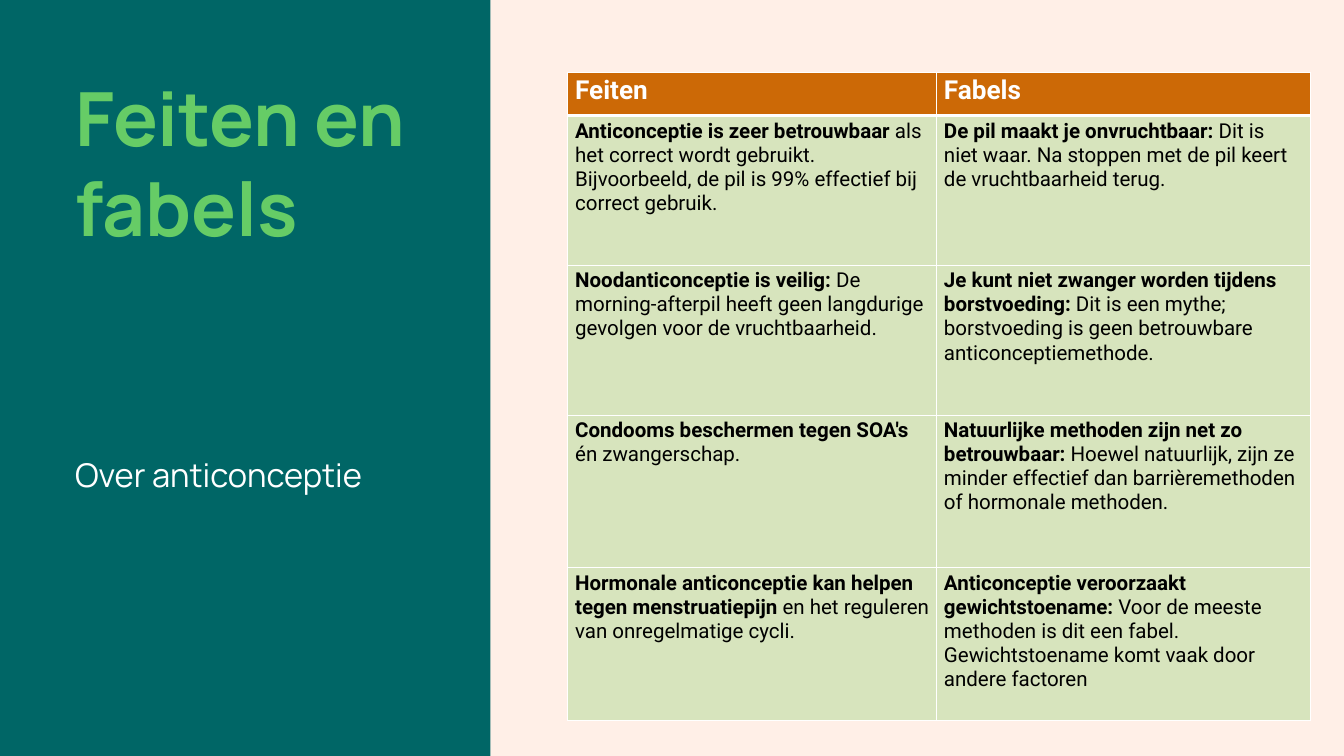
from typing import Any, NamedTuple

from lxml.etree import SubElement
from pptx import Presentation
from pptx.dml.color import RGBColor
from pptx.enum.shapes import MSO_SHAPE
from pptx.oxml.ns import qn
from pptx.util import Cm, Pt

COLORS = {
    "page": "FFEFE7",
    "panel": "006666",
    "title": "66CC66",
    "white": "FFFFFF",
    "black": "000000",
    "head": "CC6906",
    "body": "D7E4BD",
}


class Label(NamedTuple):
    text: str
    top: float
    height: float
    size: int
    color: str
    bold: bool
    lead: int


class Entry(NamedTuple):
    claim: str
    rest: str = ""


LABELS = [
    Label("Feiten en fabels", 2.72, 10.26, 80, "title", True, 96),
    Label("Over anticonceptie", 17.2, 1.5, 35, "white", False, 42),
]
WIDTHS = [13.94, 14.12]
HEIGHTS = [1.65, 5.66, 5.66, 5.77, 5.77]
MARGINS = {
    "margin_left": Cm(0.28),
    "margin_right": Cm(0.28),
    "margin_top": Cm(0.13),
    "margin_bottom": Cm(0.13),
}
FLUSH = dict.fromkeys(MARGINS, Cm(0))
ROWS = [
    (Entry("Feiten"), Entry("Fabels")),
    (
        Entry("Anticonceptie is zeer betrouwbaar",
              " als het correct wordt gebruikt. Bijvoorbeeld, de pil is 99% effectief bij correct gebruik."),
        Entry("De pil maakt je onvruchtbaar:",
              " Dit is niet waar. Na stoppen met de pil keert de vruchtbaarheid terug."),
    ),
    (
        Entry("Noodanticonceptie is veilig:",
              " De morning-afterpil heeft geen langdurige gevolgen voor de vruchtbaarheid."),
        Entry("Je kunt niet zwanger worden tijdens borstvoeding:",
              " Dit is een mythe; borstvoeding is geen betrouwbare anticonceptiemethode."),
    ),
    (
        Entry("Condooms beschermen tegen SOA's", " én zwangerschap."),
        Entry("Natuurlijke methoden zijn net zo betrouwbaar:",
              " Hoewel natuurlijk, zijn ze minder effectief dan barrièremethoden of hormonale methoden."),
    ),
    (
        Entry("Hormonale anticonceptie kan helpen tegen menstruatiepijn",
              " en het reguleren van onregelmatige cycli."),
        Entry("Anticonceptie veroorzaakt gewichtstoename:",
              " Voor de meeste methoden is dit een fabel. Gewichtstoename komt vaak door andere factoren"),
    ),
]


def apply(target: Any, values: dict[str, Any]) -> None:
    for name, value in values.items():
        setattr(target, name, value)


def paint(fill: Any, color: str) -> None:
    fill.solid()
    fill.fore_color.rgb = RGBColor.from_string(COLORS[color])


def add_run(para: Any, text: str, color: str, **style: Any) -> None:
    run = para.add_run()
    run.text = text
    apply(run.font, style)
    run.font.color.rgb = RGBColor.from_string(COLORS[color])


def add_panel(slide: Any, deck: Any) -> None:
    panel = slide.shapes.add_shape(
        MSO_SHAPE.RECTANGLE, Cm(0), Cm(0), Cm(18.54), deck.slide_height)
    panel.shadow.inherit = False
    paint(panel.fill, "panel")
    panel.line.fill.background()


def add_label(slide: Any, label: Label) -> None:
    box = slide.shapes.add_textbox(
        Cm(2.84), Cm(label.top), Cm(12.95), Cm(label.height))
    apply(box.text_frame, {"word_wrap": True, **FLUSH})
    para = box.text_frame.paragraphs[0]
    para.line_spacing = Pt(label.lead)
    add_run(para, label.text, label.color,
            name="Manrope", size=Pt(label.size), bold=label.bold)


def add_edges(cell: Any, widths: dict[str, int]) -> None:
    """Draw white cell borders; must run before the cell gets its fill."""
    props = cell._tc.get_or_add_tcPr()
    for side, width in widths.items():
        line = SubElement(props, qn(f"a:ln{side}"), w=str(Pt(width)))
        fill = SubElement(line, qn("a:solidFill"))
        SubElement(fill, qn("a:srgbClr"), val=COLORS["white"])


def fill_cell(cell: Any, entry: Entry, row: int) -> None:
    head = row == 0
    add_edges(cell, {"L": 1, "R": 1, "T": 3 if row == 1 else 1, "B": 3 if head else 1})
    paint(cell.fill, "head" if head else "body")
    apply(cell, MARGINS)
    para = cell.text_frame.paragraphs[0]
    style = {"name": "Roboto", "size": Pt(28 if head else 22)}
    color = "white" if head else "black"
    add_run(para, entry.claim, color, bold=True, **style)
    if entry.rest:
        add_run(para, entry.rest, color, bold=False, **style)


def add_grid(slide: Any) -> None:
    grid = slide.shapes.add_table(
        len(HEIGHTS), len(WIDTHS), Cm(21.46), Cm(2.72),
        Cm(sum(WIDTHS)), Cm(sum(HEIGHTS))).table
    grid.horz_banding = False
    for column, width in zip(grid.columns, WIDTHS):
        column.width = Cm(width)
    for index, (height, entries) in enumerate(zip(HEIGHTS, ROWS)):
        grid.rows[index].height = Cm(height)
        for column, entry in enumerate(entries):
            fill_cell(grid.cell(index, column), entry, index)


def main() -> None:
    deck = Presentation()
    apply(deck, {"slide_width": Cm(50.8), "slide_height": Cm(28.58)})
    slide = deck.slides.add_slide(deck.slide_layouts[6])
    paint(slide.background.fill, "page")
    add_panel(slide, deck)
    for label in LABELS:
        add_label(slide, label)
    add_grid(slide)
    deck.save("out.pptx")


if __name__ == "__main__":
    main()
